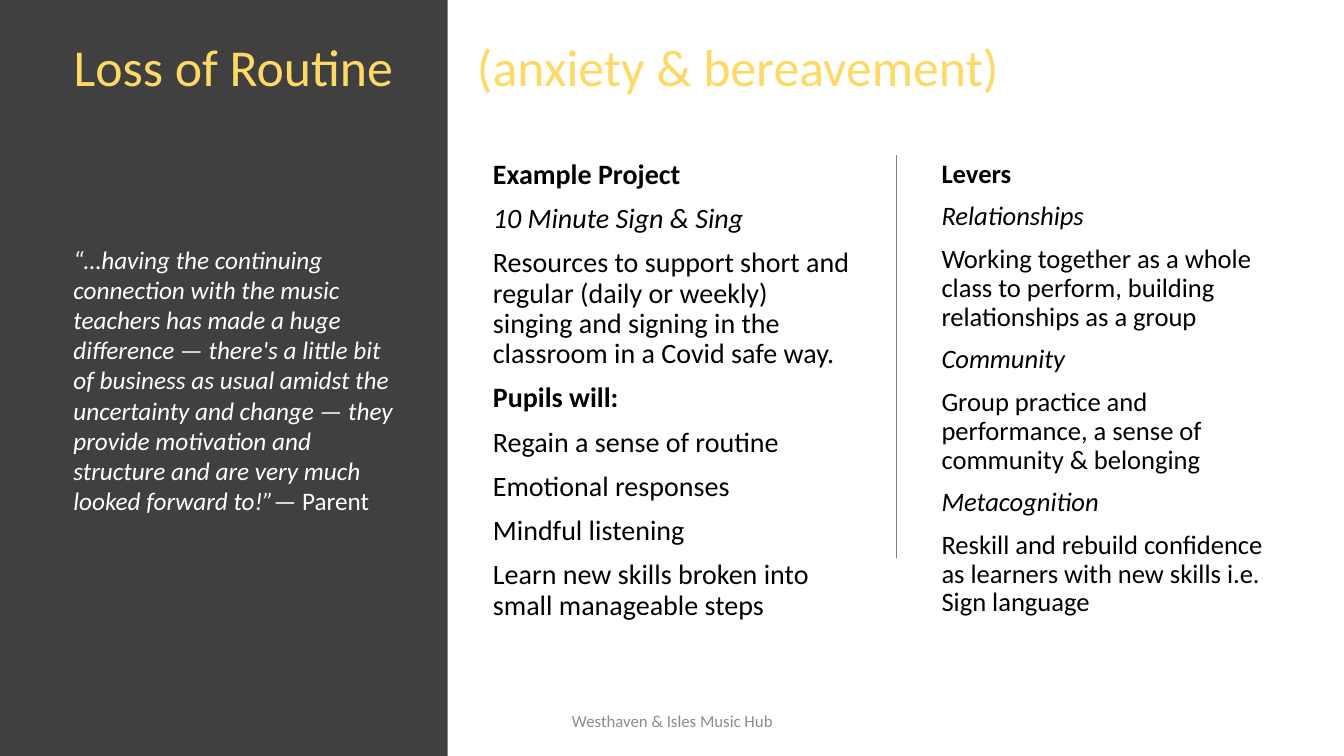
from lxml import etree
from pptx import Presentation
from pptx.dml.color import RGBColor
from pptx.enum.shapes import MSO_CONNECTOR, MSO_SHAPE
from pptx.enum.text import MSO_ANCHOR as ANCHOR, MSO_AUTO_SIZE, PP_ALIGN as ALIGN
from pptx.oxml.ns import qn
from pptx.util import Inches, Pt

FONT = "Calibri"
COLORS = {
    "panel": "404040",
    "title": "FFD966",
    "body": "000000",
    "quote": "FFFFFF",
    "rule": "808080",
    "footer": "8C8C8C",
}

# Column text: (wording, style)
PROJECT = [
    ("Example Project", "bold"),
    ("10 Minute Sign & Sing", "italic"),
    ("Resources to support short and regular (daily or weekly) singing and "
     "signing in the classroom in a Covid safe way.", "plain"),
    ("Pupils will:", "bold"),
    ("Regain a sense of routine", "plain"),
    ("Emotional responses", "plain"),
    ("Mindful listening", "plain"),
    ("Learn new skills broken into small manageable steps", "plain"),
]
LEVERS = [
    ("Levers", "bold"),
    ("Relationships", "italic"),
    ("Working together as a whole class to perform, building relationships "
     "as a group", "plain"),
    ("Community", "italic"),
    ("Group practice and performance, a sense of community & belonging", "plain"),
    ("Metacognition", "italic"),
    ("Reskill and rebuild confidence as learners with new skills i.e. "
     "Sign language", "plain"),
]
QUOTE = (
    "“…having the continuing connection with the music teachers has made a huge "
    "difference — there's a little bit of business as usual amidst the "
    "uncertainty and change — they provide motivation and structure and are "
    "very much looked forward to!”"
)


def rgb(name):
    return RGBColor.from_string(COLORS[name])


def add_run(p, text, size, color, style="plain"):
    r = p.add_run()
    r.text = text
    r.font.name = FONT
    r.font.size = Pt(size)
    r.font.color.rgb = rgb(color)
    r.font.bold = style == "bold"
    r.font.italic = style == "italic"


def add_text_box(s, x, y, w, h, anchor=ANCHOR.TOP):
    tf = s.shapes.add_textbox(Inches(x), Inches(y), Inches(w), Inches(h)).text_frame
    tf.word_wrap = True
    tf.vertical_anchor = anchor
    return tf


def add_column(s, x, w, size, lines):
    tf = add_text_box(s, x, 1.54, w, 4.77)
    for i, (text, style) in enumerate(lines):
        p = tf.add_paragraph() if i else tf.paragraphs[0]
        p.line_spacing = 0.9
        p.space_before = Pt(10)
        add_run(p, text, size, "body", style)


def add_panel(s):
    panel = s.shapes.add_shape(MSO_SHAPE.RECTANGLE, 0, 0, Inches(4.44), Inches(7.5))
    panel.shadow.inherit = False
    panel.fill.solid()
    panel.fill.fore_color.rgb = rgb("panel")
    panel.line.fill.background()
    # Send the panel behind the title
    s.shapes.title.element.addprevious(panel.element)


def set_title(s, text):
    title = s.shapes.title
    title.left, title.top = Inches(0.63), Inches(0.36)
    title.width, title.height = Inches(11.56), Inches(1.42)
    tf = title.text_frame
    tf.word_wrap = True
    tf.auto_size = MSO_AUTO_SIZE.NONE
    tf.vertical_anchor = ANCHOR.TOP
    p = tf.paragraphs[0]
    p.alignment = ALIGN.LEFT
    p.line_spacing = 0.9
    add_run(p, text, 37, "title")


def add_divider(s, x, top, bottom):
    line = s.shapes.add_connector(
        MSO_CONNECTOR.STRAIGHT, Inches(x), Inches(top), Inches(x), Inches(bottom))
    line.line.color.rgb = rgb("rule")
    line.line.width = Pt(1)
    etree.SubElement(line.element.spPr, qn("a:effectLst"))


def main():
    prs = Presentation()
    prs.slide_width, prs.slide_height = Inches(13.33), Inches(7.5)
    s = prs.slides.add_slide(prs.slide_layouts[5])

    # Dark side panel and title
    add_panel(s)
    set_title(s, "Loss of Routine \t\t(anxiety & bereavement)")

    # Two columns with a divider between them
    add_column(s, 4.79, 3.75, 20, PROJECT)
    add_divider(s, 8.89, 1.54, 5.54)
    add_column(s, 9.24, 3.5, 19, LEVERS)

    # Footer
    p = add_text_box(s, 4.42, 6.95, 4.5, 0.4, ANCHOR.MIDDLE).paragraphs[0]
    p.alignment = ALIGN.CENTER
    add_run(p, "Westhaven & Isles Music Hub", 12, "footer")

    # Quote on the panel
    p = add_text_box(s, 0.63, 2.37, 3.49, 3.13).paragraphs[0]
    add_run(p, QUOTE, 18, "quote", "italic")
    add_run(p, "— Parent", 18, "quote")

    prs.save("out.pptx")


if __name__ == "__main__":
    main()
